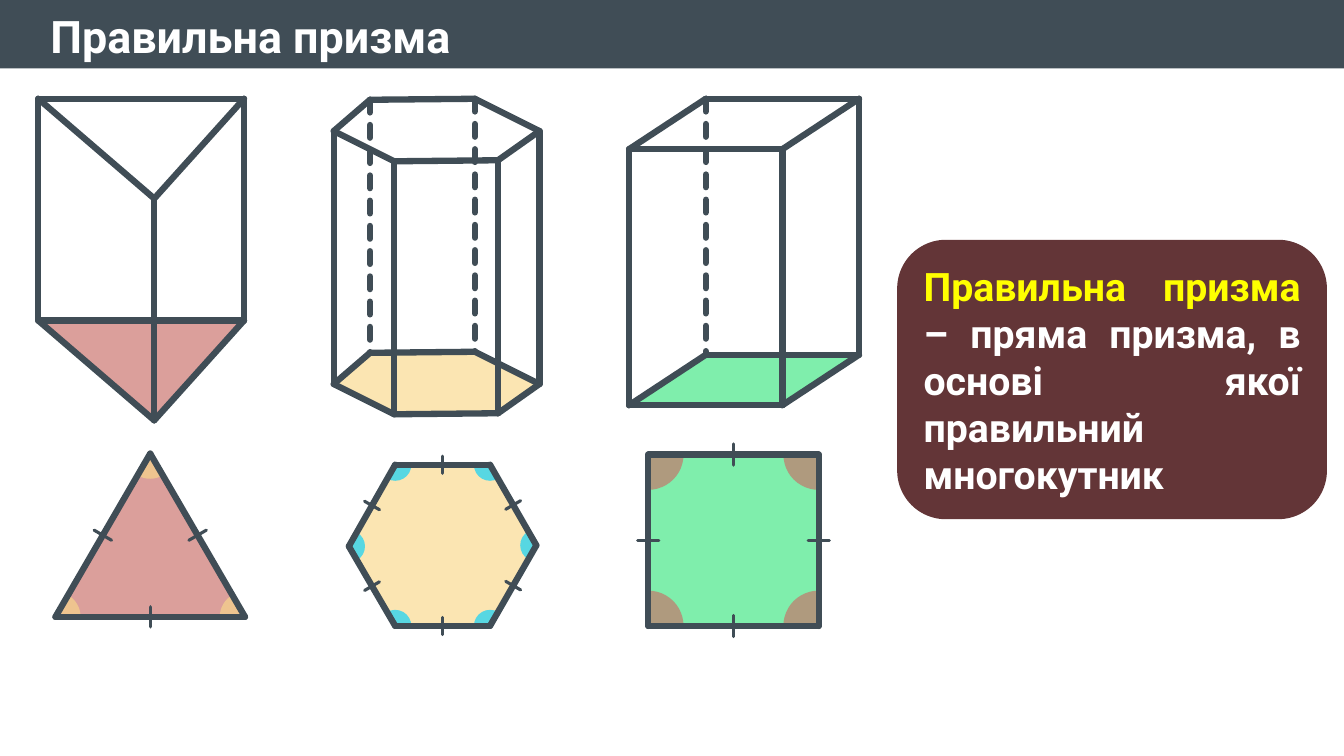
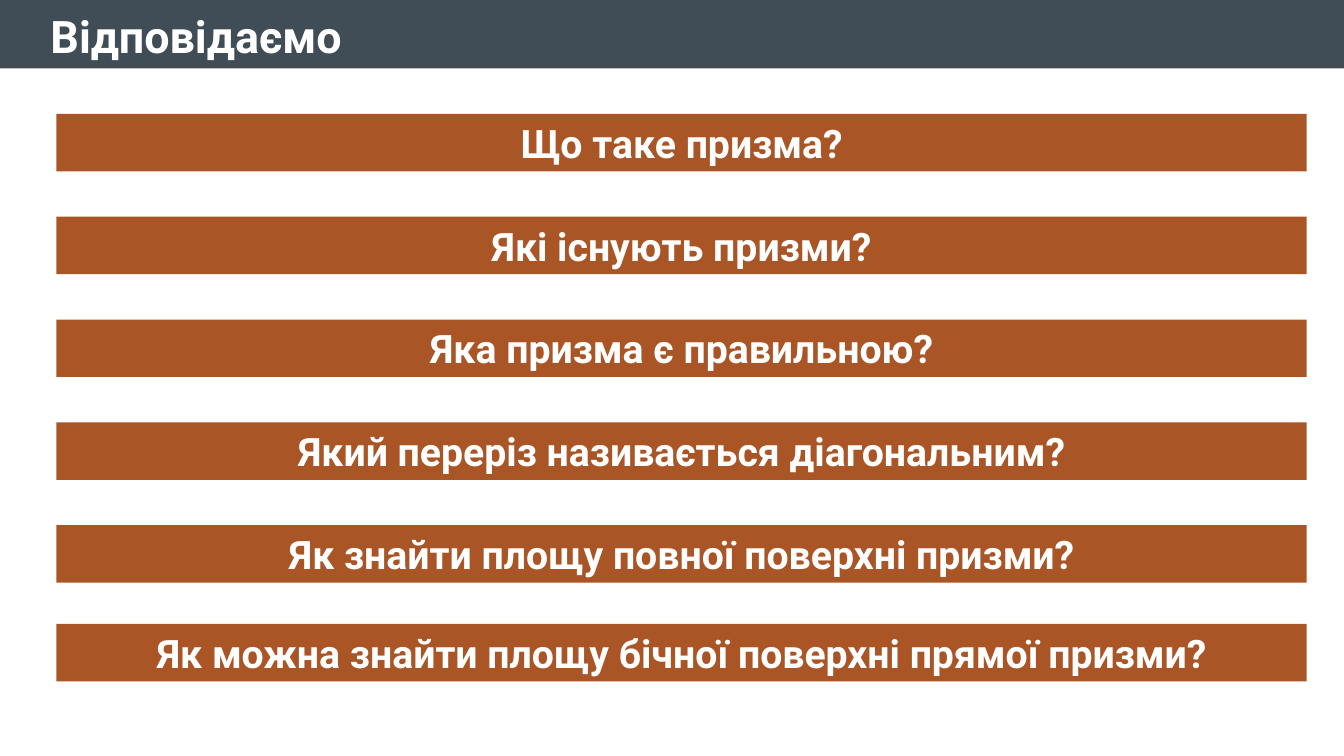
from math import atan2, cos, degrees, pi, sin

from lxml.etree import SubElement
from pptx import Presentation
from pptx.dml.color import RGBColor
from pptx.enum.dml import MSO_LINE
from pptx.enum.shapes import MSO_CONNECTOR, MSO_SHAPE
from pptx.enum.text import MSO_ANCHOR, PP_ALIGN
from pptx.oxml.ns import qn
from pptx.util import Inches, Pt

SLATE, WHITE, YELLOW = "404D56", "FFFFFF", "FFFF00"
MAROON, BROWN = "633537", "AA5526"
ROSE, SAND, GREEN, CYAN = "C96D66", "F9D889", "3BE580", "00D0FC"
SLIDE_WIDTH, SLIDE_HEIGHT = 13.33, 7.5
EDGE, TICK = 4.5, 2.25  # line widths in points

PRISM_TITLE = "Правильна призма"
DEFINITION = [
    ("Правильна призма", YELLOW),
    (" – пряма призма, в основі якої правильний многокутник", WHITE),
]
PRISMS = [
    {"top": [(0.38, 0.98), (2.42, 0.98), (1.53, 1.97)],
     "height": 2.2, "hidden": (), "color": ROSE},
    {"top": [(3.31, 1.3), (3.67, 0.99), (4.71, 0.98),
             (5.35, 1.3), (4.94, 1.59), (3.91, 1.6)],
     "height": 2.51, "hidden": (1, 2), "color": SAND},
    {"top": [(6.24, 1.48), (7, 0.98), (8.52, 0.98), (7.76, 1.48)],
     "height": 2.54, "hidden": (1,), "color": GREEN},
]
# Corners run clockwise, so each angle opens from the next corner to the previous one
POLYGONS = [
    {"corners": [(1.49, 4.5), (2.43, 6.12), (0.55, 6.12)],
     "color": ROSE, "angle_color": SAND, "radius": 0.25, "tick": 0.2},
    {"corners": [(3.92, 4.61), (4.86, 4.61), (5.32, 5.41),
                 (4.86, 6.21), (3.92, 6.21), (3.46, 5.42)],
     "color": SAND, "angle_color": CYAN, "radius": 0.16, "tick": 0.17},
    {"corners": [(6.43, 4.51), (8.12, 4.51), (8.12, 6.21), (6.43, 6.21)],
     "color": GREEN, "angle_color": ROSE, "radius": 0.35, "tick": 0.21},
]

QUESTIONS_TITLE = "Відповідаємо"
QUESTIONS = [
    "Що таке призма?",
    "Які існують призми?",
    "Яка призма є правильною?",
    "Який переріз називається діагональним?",
    "Як знайти площу повної поверхні призми?",
    "Як можна знайти площу бічної поверхні прямої призми?",
]
FIRST_TOP, QUESTION_STEP, LAST_TOP = 1.13, 1.02, 6.19


def rgb(color):
    return RGBColor.from_string(color)


def paint(shape, color, opacity=100):
    shape.shadow.inherit = False
    shape.fill.solid()
    shape.fill.fore_color.rgb = rgb(color)
    shape.line.fill.background()
    if opacity < 100:
        fill_color = shape._element.spPr.find(".//" + qn("a:srgbClr"))
        SubElement(fill_color, qn("a:alpha")).set("val", str(opacity * 1000))


def add_filled(slide, preset, box, color, opacity=100):
    shape = slide.shapes.add_shape(preset, *map(Inches, box))
    paint(shape, color, opacity)
    return shape


def write(shape, runs, size, align):
    paragraph = shape.text_frame.paragraphs[0]
    paragraph.alignment = align
    for text, color in runs:
        run = paragraph.add_run()
        run.text = text
        font_format = {"name": "Roboto", "size": Pt(size), "bold": True}
        for key, value in font_format.items():
            setattr(run.font, key, value)
        run.font.color.rgb = rgb(color)


def add_line(slide, start, end, width=EDGE, dashed=False):
    line = slide.shapes.add_connector(
        MSO_CONNECTOR.STRAIGHT, *map(Inches, (*start, *end)))
    line.line.color.rgb = rgb(SLATE)
    line.line.width = Pt(width)
    if dashed:
        line.line.dash_style = MSO_LINE.SQUARE_DOT
    properties = line._element.spPr
    properties.find(qn("a:ln")).set("cap", "rnd")
    SubElement(properties, qn("a:effectLst"))


def sides(corners):
    return list(zip(corners, corners[1:] + corners[:1]))


def add_face(slide, corners, color):
    points = [(Inches(x), Inches(y)) for x, y in corners]
    outline = slide.shapes.build_freeform(*points[0], scale=1.0)
    outline.add_line_segments(points[1:], close=True)
    paint(outline.convert_to_shape(), color, opacity=65)


def add_outline(slide, corners):
    for start, end in sides(corners):
        add_line(slide, start, end)


def add_prism(slide, top, height, hidden, color):
    base = [(x, y + height) for x, y in top]
    add_face(slide, base, color)
    for index, (upper, lower) in enumerate(zip(top, base)):
        add_line(slide, upper, lower, dashed=index in hidden)
    add_outline(slide, top)
    add_outline(slide, base)


def direction(start, end):
    return atan2(end[1] - start[1], end[0] - start[0])


def add_polygon(slide, corners, color, angle_color, radius, tick):
    """Draw a regular polygon with its equal angles and equal sides marked."""
    add_face(slide, corners, color)
    for index, (corner, following) in enumerate(sides(corners)):
        x, y = corner
        box = (x - radius, y - radius, 2 * radius, 2 * radius)
        sector = add_filled(slide, MSO_SHAPE.PIE, box, angle_color, opacity=65)
        for position, neighbour in enumerate((following, corners[index - 1])):
            # The preset stores 60000ths of a degree, scaled down by 100000
            turn = degrees(direction(corner, neighbour)) % 360
            sector.adjustments[position] = turn * 0.6
    for start, end in sides(corners):
        across = direction(start, end) + pi / 2
        dx, dy = cos(across) * tick / 2, sin(across) * tick / 2
        x, y = (start[0] + end[0]) / 2, (start[1] + end[1]) / 2
        add_line(slide, (x - dx, y - dy), (x + dx, y + dy), TICK)
    add_outline(slide, corners)


def add_titled_slide(deck, title_text):
    slide = deck.slides.add_slide(deck.slide_layouts[5])
    title = slide.shapes.title
    place = {"left": 0.4, "top": 0.04, "width": 12.38, "height": 0.64}
    for key, value in place.items():
        setattr(title, key, Inches(value))
    title.text_frame.vertical_anchor = MSO_ANCHOR.TOP
    write(title, [(title_text, WHITE)], 32, PP_ALIGN.LEFT)
    band = add_filled(slide, MSO_SHAPE.RECTANGLE, (0, 0, SLIDE_WIDTH, 0.68), SLATE)
    title._element.addprevious(band._element)
    return slide


def build_prism_slide(deck):
    slide = add_titled_slide(deck, PRISM_TITLE)
    for prism in PRISMS:
        add_prism(slide, **prism)
    for polygon in POLYGONS:
        add_polygon(slide, **polygon)
    card = add_filled(
        slide, MSO_SHAPE.ROUNDED_RECTANGLE, (8.93, 2.41, 4.2, 2.71), MAROON)
    card.line.color.rgb = rgb(MAROON)
    card.line.width = Pt(EDGE)
    write(card, DEFINITION, 28, PP_ALIGN.JUSTIFY)


def build_question_slide(deck):
    slide = add_titled_slide(deck, QUESTIONS_TITLE)
    for index, question in enumerate(QUESTIONS):
        top = min(FIRST_TOP + index * QUESTION_STEP, LAST_TOP)
        bar = add_filled(slide, MSO_SHAPE.RECTANGLE, (0.56, top, 12.4, 0.57), BROWN)
        write(bar, [(question, WHITE)], 28, PP_ALIGN.CENTER)


def main():
    deck = Presentation()
    deck.slide_width = Inches(SLIDE_WIDTH)
    deck.slide_height = Inches(SLIDE_HEIGHT)
    build_prism_slide(deck)
    build_question_slide(deck)
    deck.save("out.pptx")


if __name__ == "__main__":
    main()
